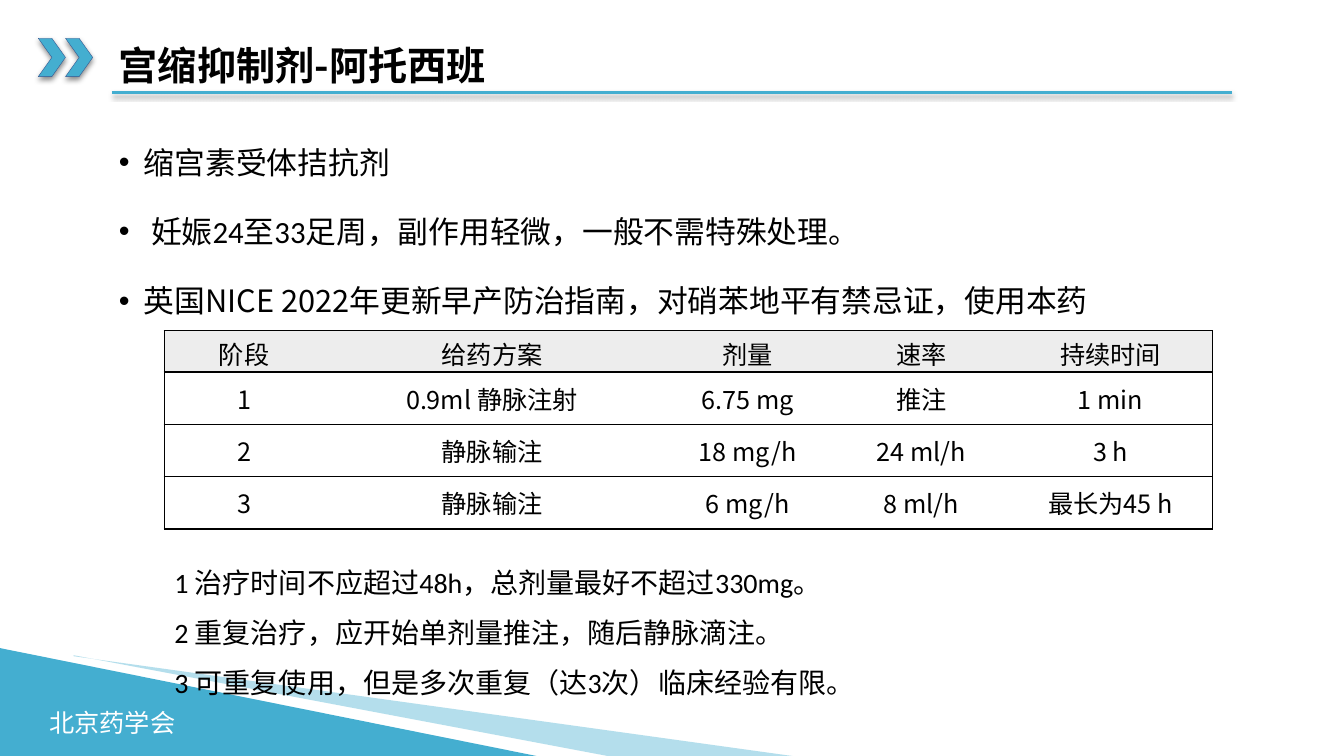
import pptx
import pptx.util
import pptx.dml.color
import pptx.enum.shapes
import pptx.enum.text
import pptx.oxml
import pptx.oxml.ns
from dataclasses import dataclass
from lxml import etree
from pptx.util import Inches, Pt


@dataclass(frozen=True)
class Theme:
    accent: str = "44AED0"
    chevron_line: str = "325491"
    text: str = "000000"
    light: str = "FFFFFF"
    header: str = "EDEDED"
    heading_font: str = "Noto Sans CJK SC"
    body_font: str = "Calibri"
    title_size: int = 28
    bullet_size: int = 22
    note_size: int = 20
    small_size: int = 18


theme = Theme()
rgb = pptx.dml.color.RGBColor.from_string
qn = pptx.oxml.ns.qn
MSO_SHAPE = pptx.enum.shapes.MSO_SHAPE
ANCHOR = pptx.enum.text.MSO_ANCHOR


def set_font(font, name, size, color, bold=False):
    font.name, font.size, font.bold = name, Pt(size), bold
    font.color.rgb = rgb(color)


def add_xml(parent, xml):
    """Append a DrawingML fragment to an element and return it."""
    namespace = pptx.oxml.ns.nsdecls("a")
    tag, rest = xml[:xml.index(" ")], xml[xml.index(" "):]
    element = pptx.oxml.parse_xml(f"{tag} {namespace}{rest}")
    parent.append(element)
    return element


shadow_xml = ('<a:effectLst ><a:outerShdw blurRad="{blur}" dist="25400" dir="5400000" algn="t" rotWithShape="0">'
              '<a:srgbClr val="{color}"><a:alpha val="{alpha}"/></a:srgbClr></a:outerShdw></a:effectLst>')

presentation = pptx.Presentation()
presentation.slide_width, presentation.slide_height = Inches(13.33), Inches(7.5)
slide = presentation.slides.add_slide(presentation.slide_layouts[6])
shapes = slide.shapes

# Rule under the title
rule = shapes.add_connector(pptx.enum.shapes.MSO_CONNECTOR.STRAIGHT,
                            Inches(1.11), Inches(0.92), Inches(12.22), Inches(0.92))
rule.line.color.rgb = rgb(theme.accent)
rule.line.width = Pt(2.25)
add_xml(rule._element.spPr, shadow_xml.format(blur=38100, color="808080", alpha=100000))

# Corner wedge, footer name and pale sweep
wedge = shapes.add_shape(MSO_SHAPE.ISOSCELES_TRIANGLE, Inches(0), Inches(6.43), Inches(5.32), Inches(1.07))
wedge.adjustments[0] = 0
wedge.shadow.inherit = False
wedge.fill.solid()
wedge.fill.fore_color.rgb = rgb(theme.accent)
wedge.line.fill.background()

footer = shapes.add_textbox(Inches(0.39), Inches(6.97), Inches(1.46), Inches(0.4))
footer.text_frame.word_wrap = False
footer.text_frame.text = "北京药学会"
set_font(footer.text_frame.paragraphs[0].font, theme.body_font, theme.small_size, theme.light)

builder = shapes.build_freeform(Inches(0.73), Inches(6.51))
builder.add_line_segments([(Inches(x), Inches(y)) for x, y in [(7.93, 7.51), (6.08, 7.51), (0.73, 6.5)]])
sweep = builder.convert_to_shape()
sweep.shadow.inherit = False
sweep.fill.solid()
sweep.fill.fore_color.rgb = rgb(theme.accent)
sweep.line.fill.background()
add_xml(sweep._element.spPr.find(qn("a:solidFill"))[0], '<a:alpha val="40000"/>')

# Chevrons beside the title
for left in (0.65, 0.38):
    chevron = shapes.add_shape(MSO_SHAPE.CHEVRON, Inches(left), Inches(0.38), Inches(0.27), Inches(0.38))
    chevron.fill.solid()
    chevron.fill.fore_color.rgb = rgb(theme.accent)
    chevron.line.color.rgb = rgb(theme.chevron_line)
    chevron.line.width = Pt(0.25)
    add_xml(chevron._element.spPr, shadow_xml.format(blur=50800, color="000000", alpha=46000))

# Title
title = shapes.add_textbox(Inches(1.08), Inches(0.4), Inches(11.34), Inches(0.54))
title.text_frame.word_wrap = True
title.text_frame.vertical_anchor = ANCHOR.MIDDLE
title.text_frame.text = "宫缩抑制剂-阿托西班"
title_paragraph = title.text_frame.paragraphs[0]
title_paragraph.line_spacing = 0.9
set_font(title_paragraph.font, theme.heading_font, theme.title_size, theme.text, bold=True)

# Bullets: indent, then runs with their fonts
bullets = [
    (0.25, [("缩宫素受体拮抗剂", theme.heading_font)]),
    (0.32, [("妊娠24至33足周，", theme.body_font), ("副作用轻微，一般不需特殊处理。", theme.heading_font)]),
    (0.25, [("英国NICE 2022年更新早产防治指南，对硝苯地平有禁忌证，使用本药", theme.heading_font)]),
]
body = shapes.add_textbox(Inches(1.08), Inches(1.19), Inches(10.2), Inches(2.05))
body.text_frame.word_wrap = True
for index, (indent, runs) in enumerate(bullets):
    paragraph = body.text_frame.paragraphs[0] if index == 0 else body.text_frame.add_paragraph()
    paragraph.line_spacing = 1.5
    if index:
        paragraph.space_before = Pt(10)
    properties = paragraph._p.get_or_add_pPr()
    properties.set("marL", str(Inches(indent)))
    properties.set("indent", str(-Inches(indent)))
    add_xml(properties, '<a:buFont typeface="Arial"/>')
    add_xml(properties, '<a:buChar char="•"/>')
    set_font(paragraph.font, runs[0][1], theme.bullet_size, theme.text)
    for text, font_name in runs:
        run = paragraph.add_run()
        run.text = text
        if len(runs) > 1:
            run.font.name = font_name

# Dosing table
rows = [
    ["阶段", "给药方案", "剂量", "速率", "持续时间"],
    ["1", "0.9ml 静脉注射", "6.75 mg", "推注", "1 min"],
    ["2", "静脉输注", "18 mg/h", "24 ml/h", "3 h"],
    ["3", "静脉输注", "6 mg/h", "8 ml/h", "最长为45 h"],
]
column_widths = [1.58, 3.34, 1.73, 1.72, 2.03]
table = shapes.add_table(len(rows), len(column_widths), Inches(1.63), Inches(3.28),
                         Inches(10.39), Inches(1.98)).table
for column, width in zip(table.columns, column_widths):
    column.width = Inches(width)
for row_index, values in enumerate(rows):
    table.rows[row_index].height = Inches(0.52 if row_index else 0.41)
    for column_index, value in enumerate(values):
        cell = table.cell(row_index, column_index)
        cell.text = value
        cell.vertical_anchor = ANCHOR.MIDDLE
        paragraph = cell.text_frame.paragraphs[0]
        paragraph.alignment = pptx.enum.text.PP_ALIGN.CENTER
        set_font(paragraph.font, theme.heading_font, theme.small_size, theme.text)
        # Horizontal rules everywhere, vertical rules on the outside only
        drawn = {"lnL": column_index == 0, "lnR": column_index == len(values) - 1, "lnT": True, "lnB": True}
        for side, visible in drawn.items():
            paint = f'<a:solidFill><a:srgbClr val="{theme.text}"/></a:solidFill>' if visible else "<a:noFill/>"
            add_xml(cell._tc.get_or_add_tcPr(), f'<a:{side} w="12700">{paint}</a:{side}>')
        if row_index:
            cell.fill.background()
        else:
            cell.fill.solid()
            cell.fill.fore_color.rgb = rgb(theme.header)

# Notes under the table
notes = [
    "1 治疗时间不应超过48h，总剂量最好不超过330mg。",
    "2 重复治疗，应开始单剂量推注，随后静脉滴注。",
    "3 可重复使用，但是多次重复（达3次）临床经验有限。",
]
note_box = shapes.add_textbox(Inches(1.63), Inches(5.39), Inches(8.59), Inches(1.65))
note_box.text_frame.word_wrap = True
note_box.text_frame.text = "\n".join(notes)
for paragraph in note_box.text_frame.paragraphs:
    paragraph.line_spacing = 1.5
    set_font(paragraph.font, theme.body_font, theme.note_size, theme.text)

presentation.save("out.pptx")
